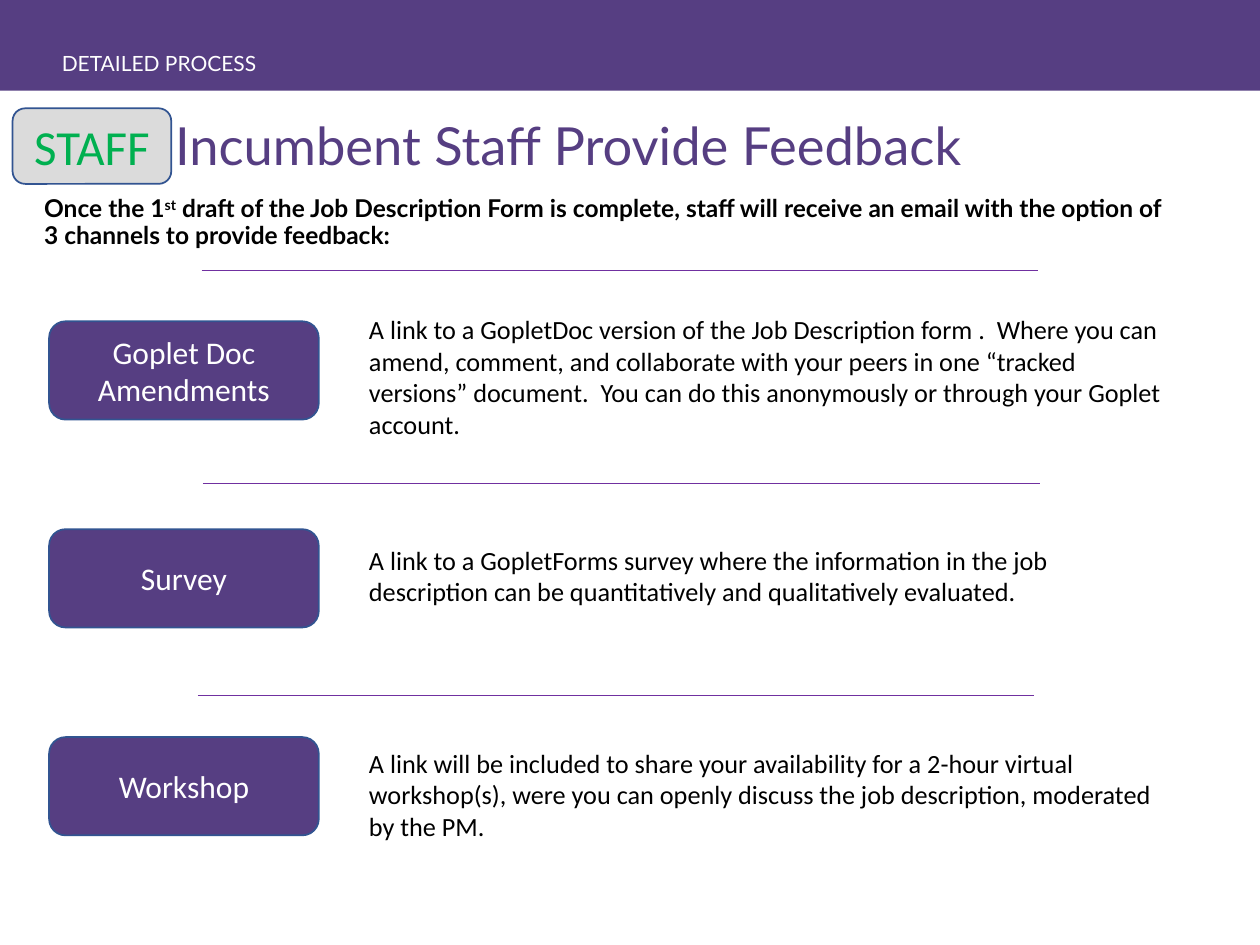
import pptx
import pptx.dml.color
import pptx.enum.shapes
import pptx.enum.text
import pptx.oxml.ns
import pptx.util
from dataclasses import dataclass
from lxml import etree

ANCHOR = pptx.enum.text.MSO_ANCHOR
ALIGN = pptx.enum.text.PP_ALIGN
SHAPE = pptx.enum.shapes.MSO_SHAPE


@dataclass
class Theme:
    purple: str = "563E82"
    rule: str = "7030A0"
    outline: str = "325491"
    badge: str = "DBDBDB"
    green: str = "00B050"
    white: str = "FFFFFF"
    black: str = "000000"
    heading_font: str = "Lato"
    body_font: str = "Calibri"
    title_size: int = 30
    badge_size: int = 28
    button_size: int = 18
    detail_size: int = 15
    intro_size: int = 14
    section_size: int = 12


def color(value):
    return pptx.dml.color.RGBColor.from_string(value)


def write(box, text, size, fill, font, bold=False, align=ALIGN.LEFT,
          anchor=ANCHOR.TOP, spacing=None, plain=False):
    """Fill a box with one paragraph; text between ^ marks is superscript."""
    frame = box.text_frame
    frame.word_wrap = True
    frame.auto_size = pptx.enum.text.MSO_AUTO_SIZE.NONE
    frame.vertical_anchor = anchor
    para = frame.paragraphs[0]
    para.alignment = align
    para.space_before = pptx.util.Pt(0)
    if spacing:
        para.line_spacing = spacing
    if plain:
        settings = para._p.get_or_add_pPr()
        settings.set("marL", "0")
        settings.set("indent", "0")
        etree.SubElement(settings, pptx.oxml.ns.qn("a:buNone"))
    for index, part in enumerate(text.split("^")):
        span = para.add_run()
        span.text = part
        span.font.size = pptx.util.Pt(size)
        span.font.name = font
        span.font.bold = bold
        span.font.color.rgb = color(fill)
        if index % 2:
            span.font._element.set("baseline", "30000")


class SlideBuilder:
    """Lengths are grid units: 100 columns by 75 rows."""
    columns, rows = 100, 75

    def __init__(self, deck, theme):
        self.theme = theme
        self.page = deck.slides.add_slide(deck.slide_layouts[3])
        self.cell_width = deck.slide_width / self.columns
        self.cell_height = deck.slide_height / self.rows

    def area(self, left, top, width, height):
        return (round(left * self.cell_width), round(top * self.cell_height),
                round(width * self.cell_width), round(height * self.cell_height))

    def placeholder(self, number, place, text, **style):
        box = self.page.placeholders[number]
        box.left, box.top, box.width, box.height = self.area(*place)
        write(box, text, font=self.theme.heading_font, spacing=0.9,
              plain=number > 0, **style)
        return box

    def block(self, kind, place, fill, outline=None):
        box = self.page.shapes.add_shape(kind, *self.area(*place))
        box.shadow.inherit = False
        box.fill.solid()
        box.fill.fore_color.rgb = color(fill)
        if outline:
            box.line.color.rgb = color(outline)
            box.line.width = pptx.util.Pt(1)
        else:
            box.line.fill.background()
        return box

    def band(self, place):
        box = self.block(SHAPE.RECTANGLE, place, self.theme.purple)
        self.page.shapes._spTree.insert(2, box._element)  # behind the text

    def button(self, place, text, fill, text_fill, size):
        box = self.block(SHAPE.ROUNDED_RECTANGLE, place, fill, self.theme.outline)
        write(box, text, size, text_fill, self.theme.body_font,
              align=ALIGN.CENTER, anchor=ANCHOR.MIDDLE)

    def detail(self, place, text):
        box = self.page.shapes.add_textbox(*self.area(*place))
        write(box, text, self.theme.detail_size, self.theme.black,
              self.theme.body_font)

    def rule(self, left, top, width):
        x, y, length, _ = self.area(left, top, width, 0)
        line = self.page.shapes.add_connector(
            pptx.enum.shapes.MSO_CONNECTOR.STRAIGHT, x, y, x + length, y)
        line.line.color.rgb = color(self.theme.rule)
        line.line.width = pptx.util.Pt(0.5)
        etree.SubElement(line._element.spPr, pptx.oxml.ns.qn("a:effectLst"))


# Feedback channels: name, text top, text height, rule left, description
CHANNELS = [
    ("Goplet Doc Amendments", 24.4, 11.1, 16,
     "A link to a GopletDoc version of the Job Description form .  Where you can "
     "amend, comment, and collaborate with your peers in one “tracked versions” "
     "document.  You can do this anonymously or through your Goplet account."),
    ("Survey", 42.7, 6.1, 16.1,
     "A link to a GopletForms survey where the information in the job description "
     "can be quantitatively and qualitatively evaluated."),
    ("Workshop", 58.8, 8.6, 15.7,
     "A link will be included to share your availability for a 2-hour virtual "
     "workshop(s), were you can openly discuss the job description, moderated by "
     "the PM."),
]


def main():
    deck = pptx.Presentation()
    deck.slide_width = pptx.util.Inches(10)
    deck.slide_height = pptx.util.Inches(7.5)
    theme = Theme()
    slide = SlideBuilder(deck, theme)

    # Header band and section name
    slide.band((-0.1, -0.2, 100.2, 7.4))
    slide.placeholder(2, (3.9, 3.7, 20.7, 3.2), "DETAILED PROCESS",
                      size=theme.section_size, fill=theme.white)

    # Title, indented to clear the badge
    title = slide.placeholder(0, (6.9, 7.6, 86.2, 8.4),
                              "Incumbent Staff Provide Feedback",
                              size=theme.title_size, fill=theme.purple,
                              anchor=ANCHOR.MIDDLE)
    title.text_frame.margin_left = pptx.util.Inches(0.7)
    slide.button((1, 8.6, 12.6, 6), "STAFF", theme.badge, theme.green,
                 theme.badge_size)

    # Introduction
    slide.placeholder(1, (2.5, 15.1, 91.6, 8.8),
                      "Once the 1^st^ draft of the Job Description Form is complete, "
                      "staff will receive an email with the option of 3 channels to "
                      "provide feedback:",
                      size=theme.intro_size, fill=theme.black, bold=True)

    # One row per channel, each under a rule
    for row, (name, top, height, rule_left, text) in enumerate(CHANNELS):
        slide.rule(rule_left, 21.5 + 16.85 * row, 66.4)
        slide.button((3.9, 25.5 + 16.5 * row, 21.4, 7.8), name, theme.purple,
                     theme.white, theme.button_size)
        slide.detail((28.3, top, 64.9, height), text)

    deck.save("out.pptx")


if __name__ == "__main__":
    main()
